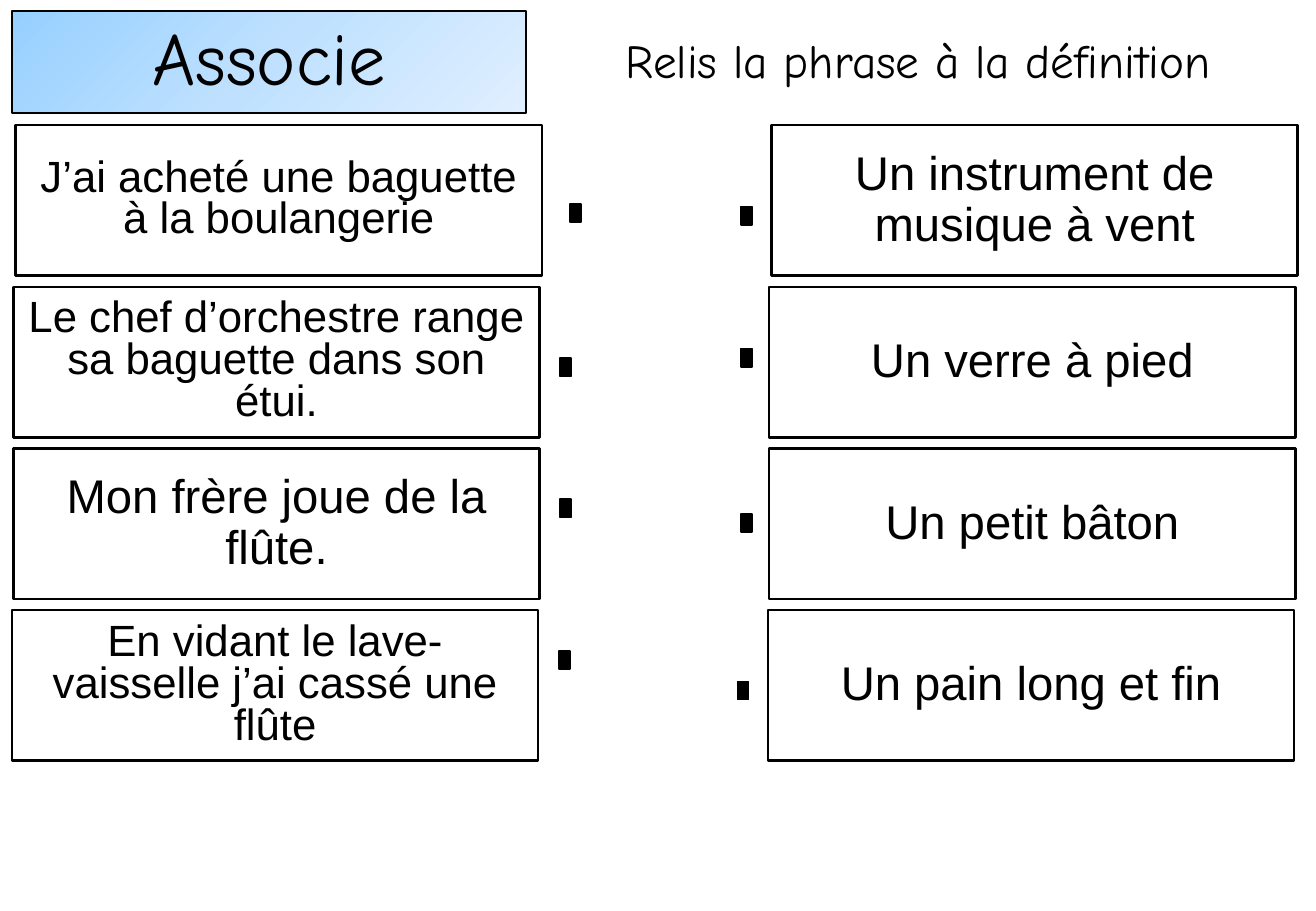
import copy

from pptx import Presentation
from pptx import util as u
from pptx.dml.color import RGBColor
from pptx.enum import shapes, text

BLACK = RGBColor(0x00, 0x00, 0x00)
SKY = RGBColor(0x96, 0xD0, 0xFF)
PALE_SKY = RGBColor(0xBF, 0xE1, 0xFF)
ICE = RGBColor(0xE0, 0xEF, 0xFF)

WIDTH, HEIGHT = u.Inches(10.83), u.Inches(7.5)

# Every position and size below is a percentage of the slide's width or height.
TOP, ROW_STEP, COLUMN_STEP = 13.73, 17.75, 57.43
CARD_W, CARD_H = 39.98, 16.53
MARKER_W, MARKER_H = 0.83, 2

NORMAL = (28, 0.9)  # font size, line spacing
TIGHT = (25.9, 0.8)

# Each row: left edge, then per column the text, its style and its marker's place
ROWS = [
    (1.2, [("J’ai acheté une baguette à la boulangerie", TIGHT, (43.31, 22.4)),
           ("Un instrument de musique à vent", NORMAL, (56.33, 22.67))]),
    (1.02, [("Le chef d’orchestre range sa baguette dans son étui.", TIGHT, (42.57, 39.33)),
            ("Un verre à pied", NORMAL, (56.33, 38.27))]),
    (1.02, [("Mon frère joue de la flûte.", NORMAL, (42.57, 54.8)),
            ("Un petit bâton", NORMAL, (56.33, 56.4))]),
    (0.92, [("En vidant le lave-vaisselle j’ai cassé une flûte", TIGHT, (42.47, 71.47)),
            ("Un pain long et fin", NORMAL, (56.05, 74.8))]),
]


def place(x, y, w, h):
    """Turn percentages of the slide into lengths."""
    return [round(share * side / 100)
            for share, side in ((x, WIDTH), (y, HEIGHT), (w, WIDTH), (h, HEIGHT))]


def add_box(s, box, line_width):
    sp = s.shapes.add_shape(shapes.MSO_SHAPE.RECTANGLE, *place(*box))
    sp.shadow.inherit = False
    sp.fill.background()
    sp.line.color.rgb = BLACK
    sp.line.width = u.Pt(line_width)
    return sp


def write(sp, words, style, font="Arial", before=10):
    size, spacing = style
    tf = sp.text_frame
    tf.word_wrap = True
    tf.vertical_anchor = text.MSO_ANCHOR.MIDDLE
    p = tf.paragraphs[0]
    p.text = words
    p.alignment = text.PP_ALIGN.CENTER
    p.line_spacing = spacing
    p.space_before = u.Pt(before)
    p.font.name = font
    p.font.size = u.Pt(size)
    p.font.color.rgb = BLACK


def fill_gradient(sp):
    sp.fill.gradient()
    sp.fill.gradient_angle = 315
    stops = sp.element.xpath(".//a:gsLst")[0]
    stops.insert(1, copy.deepcopy(stops[0]))
    for stop, color, position in zip(sp.fill.gradient_stops, (SKY, PALE_SKY, ICE), (0, 0.5, 1)):
        stop.color.rgb = color
        stop.position = position


def add_header(s):
    title = add_box(s, (0.92, 1.2, 39.06, 11.2), 1.5)
    fill_gradient(title)
    write(title, "Associe", (44, 0.9), "Comic Neue", 0)
    prompt = s.shapes.add_textbox(*place(40.35, 1.33, 58.82, 11.2))
    write(prompt, "Relis la phrase à la définition", NORMAL, "Comic Neue")


def add_marker(s, x, y):
    sp = add_box(s, (x, y, MARKER_W, MARKER_H), 1)
    sp.fill.solid()
    sp.fill.fore_color.rgb = BLACK


def main():
    prs = Presentation()
    prs.slide_width, prs.slide_height = WIDTH, HEIGHT
    s = prs.slides.add_slide(prs.slide_layouts[6])
    add_header(s)
    for row, (left, cards) in enumerate(ROWS):
        for column, (words, style, marker) in enumerate(cards):
            box = (left + column * COLUMN_STEP, TOP + row * ROW_STEP, CARD_W, CARD_H)
            write(add_box(s, box, 1.5), words, style)
            add_marker(s, *marker)
    prs.save("out.pptx")


if __name__ == "__main__":
    main()
